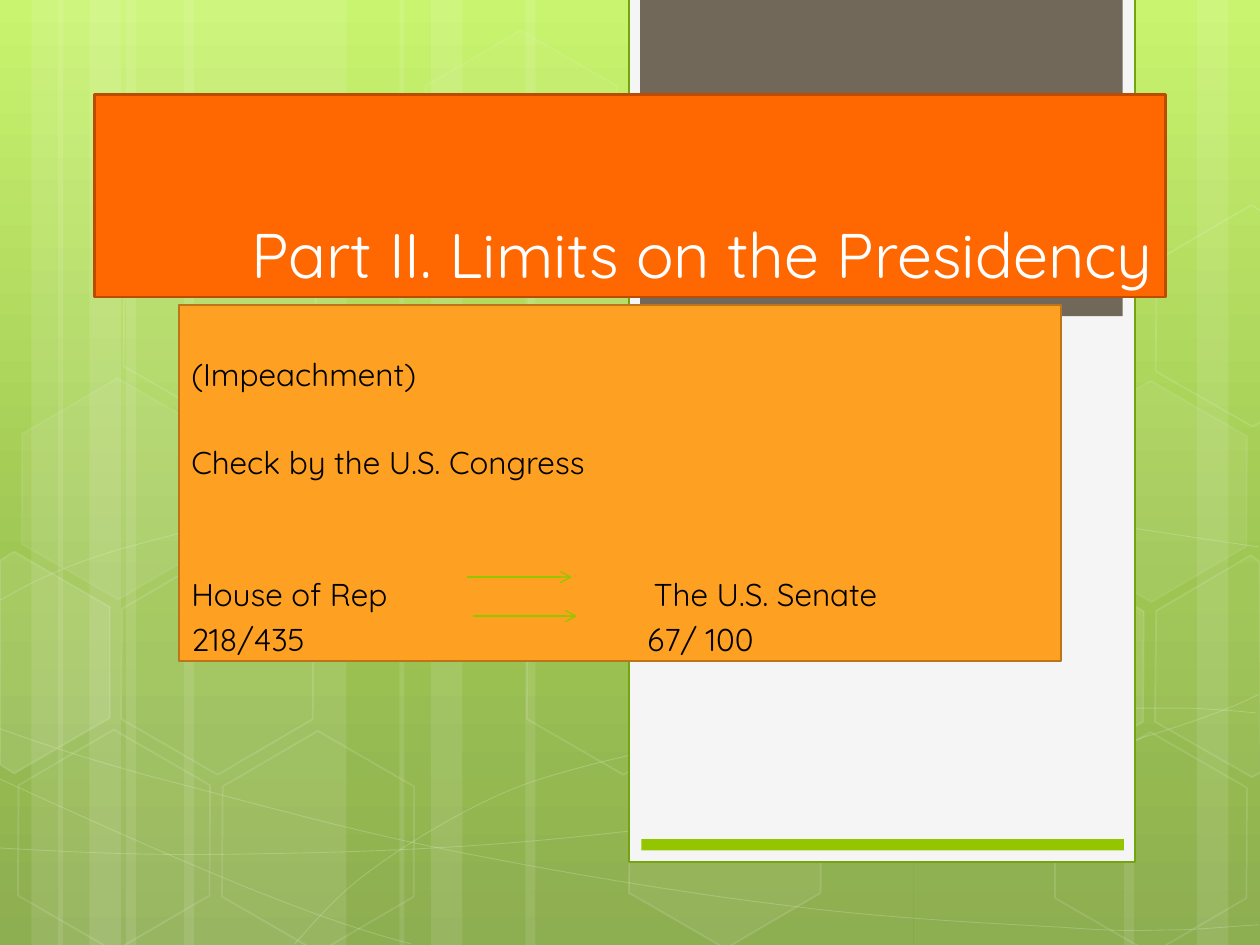
from copy import deepcopy
from math import cos, radians, sin

from lxml.etree import SubElement
from pptx import Presentation
from pptx.dml.color import RGBColor
from pptx.enum.shapes import MSO_CONNECTOR as CONNECTOR, MSO_SHAPE as SHAPE
from pptx.enum.text import MSO_ANCHOR as ANCHOR, PP_ALIGN as ALIGN
from pptx.oxml.ns import qn
from pptx.util import Inches, Pt


def paint(fill, color=None, alpha=100):
    if color is None:
        fill.background()
        return
    fill.solid()
    fill.fore_color.rgb = RGBColor.from_string(color)
    if alpha < 100:
        tint = fill._xPr.find(".//" + qn("a:srgbClr"))
        SubElement(tint, qn("a:alpha"), val=str(alpha * 1000))


def write(paragraph, text, size=18, color="000000", align=ALIGN.LEFT, before=0, tab=None):
    paragraph.alignment = align
    paragraph.space_before = Pt(before)
    if tab:
        stops = SubElement(paragraph._p.get_or_add_pPr(), qn("a:tabLst"))
        SubElement(stops, qn("a:tab"), pos=str(Inches(tab)), algn="l")
    run = paragraph.add_run()
    run.text = text
    run.font.size = Pt(size)
    run.font.name = "Quicksand"
    paint(run.font.fill, color)


prs = Presentation()
prs.slide_width, prs.slide_height = Inches(10), Inches(7.5)
slide = prs.slides.add_slide(prs.slide_layouts[5])
shapes = slide.shapes

backdrop = slide.background.fill
backdrop.gradient()
backdrop.gradient_angle = 270
gradient = slide.element.find(".//" + qn("a:gsLst"))
gradient.insert(1, deepcopy(gradient[0]))
for stop, (position, color) in zip(
    backdrop.gradient_stops, [(0, "C3F35F"), (0.62, "93BF3F"), (1, "81A53E")]
):
    stop.position = position
    stop.color.rgb = RGBColor.from_string(color)

stripes = [
    (1, 1.75), (0, 0.5), (0.25, 0.83), (1.46, 1.75), (0.46, 0.5), (0.71, 0.83),
    (7.25, 1.75), (9.5, 0.5), (8.92, 0.83), (4.17, 3.08), (3.17, 0.5), (3.42, 0.83),
]
for left, width in stripes:
    stripe = shapes.add_shape(SHAPE.RECTANGLE, Inches(left), 0, Inches(width), Inches(7.5))
    stripe.shadow.inherit = False
    paint(stripe.fill, "FFFFFF", 10)
    paint(stripe.line.fill)

waves = [
    [(-0.01, 6.73), (0.53, 6.76), (1.07, 6.79), (1.82, 6.78), (2.57, 6.77), (3.49, 6.75),
     (4.49, 6.65), (5.5, 6.55), (6.92, 6.36), (7.83, 6.17), (8.75, 5.98), (9.68, 5.68),
     (9.99, 5.51)],
    [(-0.01, 4.77), (0.27, 4.61), (0.56, 4.46), (1.13, 4.31), (1.7, 4.16), (2.5, 3.94),
     (3.39, 3.87), (4.28, 3.8), (5.35, 3.79), (6.45, 3.87), (7.55, 3.95), (9.39, 4.26),
     (9.99, 4.34)],
    [(-0.03, 6.17), (1.18, 6.72), (2.39, 7.27), (3.26, 7.49)],
    [(-0.01, 5.78), (0.3, 5.89), (0.61, 6), (1.19, 6.16), (1.78, 6.31), (2.65, 6.56),
     (3.48, 6.73), (4.31, 6.9), (5.37, 7.08), (6.19, 7.18), (7.02, 7.29), (7.91, 7.33),
     (8.44, 7.36), (8.97, 7.4), (9.11, 7.38), (9.36, 7.38), (9.62, 7.37), (9.8, 7.35),
     (9.99, 7.34)],
    [(2.34, 7.49), (2.52, 7.29), (2.69, 7.09), (2.94, 6.91), (3.18, 6.73), (3.51, 6.53),
     (3.79, 6.39), (4.07, 6.25), (4.24, 6.19), (4.61, 6.09), (4.98, 5.99), (5.65, 5.85),
     (6, 5.78), (6.35, 5.71), (6.4, 5.71), (6.71, 5.69), (7.02, 5.66), (7.51, 5.63),
     (7.86, 5.62), (8.2, 5.61), (8.78, 5.62), (8.78, 5.62), (9, 5.62), (9.22, 5.62),
     (9.44, 5.62), (9.63, 5.63), (9.79, 5.64), (9.88, 5.65), (9.97, 5.66), (9.94, 5.65),
     (9.97, 5.66)],
]
for knots in waves:
    knots = [(Inches(x), Inches(y)) for x, y in knots]
    builder = shapes.build_freeform(*knots[0])
    builder.add_line_segments(knots[1:], close=False)
    wave = builder.convert_to_shape()
    outline = wave.element.find(".//" + qn("a:path"))
    segments = outline.findall(qn("a:lnTo"))
    for start in range(0, len(segments), 3):
        curve = SubElement(outline, qn("a:cubicBezTo"))
        for segment in segments[start:start + 3]:
            curve.append(segment[0])
            outline.remove(segment)
    wave.shadow.inherit = False
    paint(wave.fill)
    paint(wave.line.fill, "FFFFFF", 20)
    wave.line.width = Pt(0.5)

hexagons = [
    (4.07, 4.51, 0, 12), (4.08, 1.74, 7, 8), (3.26, 0.36, 4, 8), (4.88, 5.89, 6, 12),
    (0.03, 5.91, 0, 12), (0.06, 3.12, 7, 8), (0.85, 4.51, 0, 12), (1.65, 5.92, 0, 12),
    (1.67, 3.13, 7, 8), (0.87, 1.71, 0, 12), (7.44, 4.53, 10, 12), (8.26, 5.93, 0, 12),
    (8.26, 3.14, 7, 8),
]
cells = []
for left, top, fill_alpha, line_alpha in hexagons:
    hexagon = shapes.add_shape(
        SHAPE.HEXAGON, Inches(left), Inches(top), Inches(1.75), Inches(1.52)
    )
    hexagon.adjustments[0] = 0.285
    cells.append((hexagon, fill_alpha, line_alpha))

tilt = 30
cosine, sine = cos(radians(tilt)), sin(radians(tilt))
cut_hexagons = [
    (0.27, 5.35, 10,
     [(0, 4.45), (0.11, 4.38), (0.87, 4.82), (0.87, 5.7), (0.11, 6.14), (0, 6.07)]),
    (9.76, 5.2, 4,
     [(9.18, 4.85), (9.93, 4.41), (10, 4.46), (10.01, 6.13), (9.94, 6.17), (9.17, 5.73)]),
    (9.76, 2.41, 0,
     [(9.18, 2.07), (9.93, 1.63), (10.01, 1.68), (10.01, 3.35), (9.94, 3.39), (9.17, 2.95)]),
]
for middle_x, middle_y, fill_alpha, corners in cut_hexagons:
    offsets = [(x - middle_x, y - middle_y) for x, y in corners]
    upright = [
        (Inches(middle_x + dx * cosine + dy * sine), Inches(middle_y - dx * sine + dy * cosine))
        for dx, dy in offsets
    ]
    builder = shapes.build_freeform(*upright[0])
    builder.add_line_segments(upright[1:])
    cells.append((builder.convert_to_shape(), fill_alpha, 12))

for cell, fill_alpha, line_alpha in cells:
    cell.rotation = tilt
    cell.shadow.inherit = False
    paint(cell.fill, "FFFFFF" if fill_alpha else None, fill_alpha)
    paint(cell.line.fill, "FFFFFF", line_alpha)
    cell.line.width = Pt(1)

panels = [
    (4.99, -0.02, 4.02, 6.86, "F5F5F5", "74A510"),
    (5.08, -0.02, 3.83, 2.53, "71685A", None),
    (5.09, 6.66, 3.83, 0.09, "94C600", None),
]
for left, top, width, height, color, border in panels:
    panel = shapes.add_shape(
        SHAPE.RECTANGLE, Inches(left), Inches(top), Inches(width), Inches(height)
    )
    panel.shadow.inherit = False
    paint(panel.fill, color)
    paint(panel.line.fill, border)
    if border:
        panel.line.width = Pt(1.25)

title = shapes.title
shapes.element.append(title.element)
title.left, title.top, title.width, title.height = map(Inches, (0.75, 0.75, 8.5, 1.61))
title.text_frame.vertical_anchor = ANCHOR.BOTTOM
write(title.text_frame.paragraphs[0], "Part II. Limits on the Presidency",
      size=36, color="FFFFFF", align=ALIGN.RIGHT)

impeachment = shapes.add_textbox(Inches(1.42), Inches(2.42), Inches(7), Inches(2.83))
body = impeachment.text_frame
body.word_wrap = True
body.margin_top = Inches(0.4)
lines = [
    ("(Impeachment)", 0, None),
    ("Check by the U.S. Congress", 28.6, None),
    ("House of Rep\tThe U.S. Senate", 54, 3.67),
    ("218/435\t67/ 100", 3.6, 3.62),
]
for index, (text, before, tab) in enumerate(lines):
    paragraph = body.add_paragraph() if index else body.paragraphs[0]
    write(paragraph, text, before=before, tab=tab)

for box, color, border in [(title, "FF6700", "BD4C00"), (impeachment, "FEA022", "BC7619")]:
    paint(box.fill, color)
    paint(box.line.fill, border)
    box.line.width = Pt(1.25)

for left, top in [(3.71, 4.58), (3.75, 4.89)]:
    arrow = shapes.add_connector(
        CONNECTOR.STRAIGHT, Inches(left), Inches(top), Inches(left + 0.83), Inches(top)
    )
    paint(arrow.line.fill, "94C600")
    arrow.line.width = Pt(0.75)
    SubElement(arrow.line._get_or_add_ln(), qn("a:tailEnd"), type="arrow")
    SubElement(arrow.element.spPr, qn("a:effectLst"))

prs.save("out.pptx")
